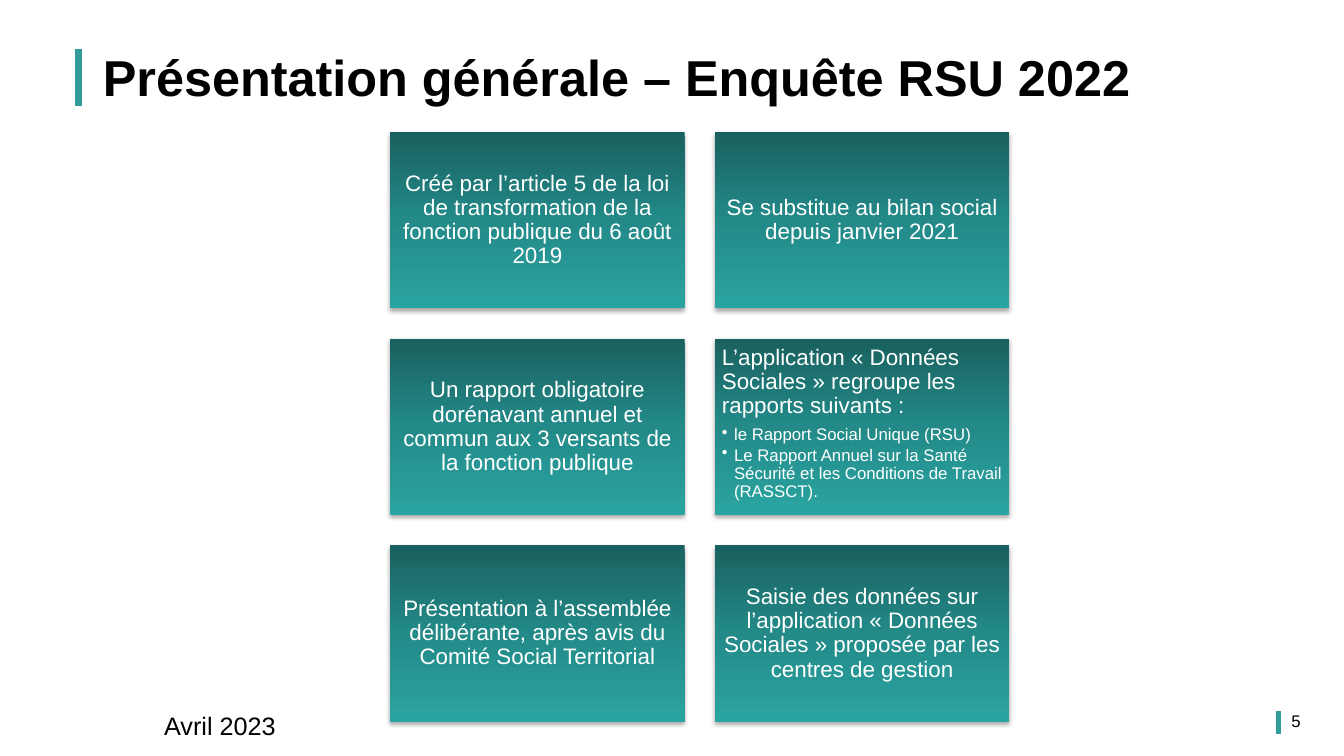
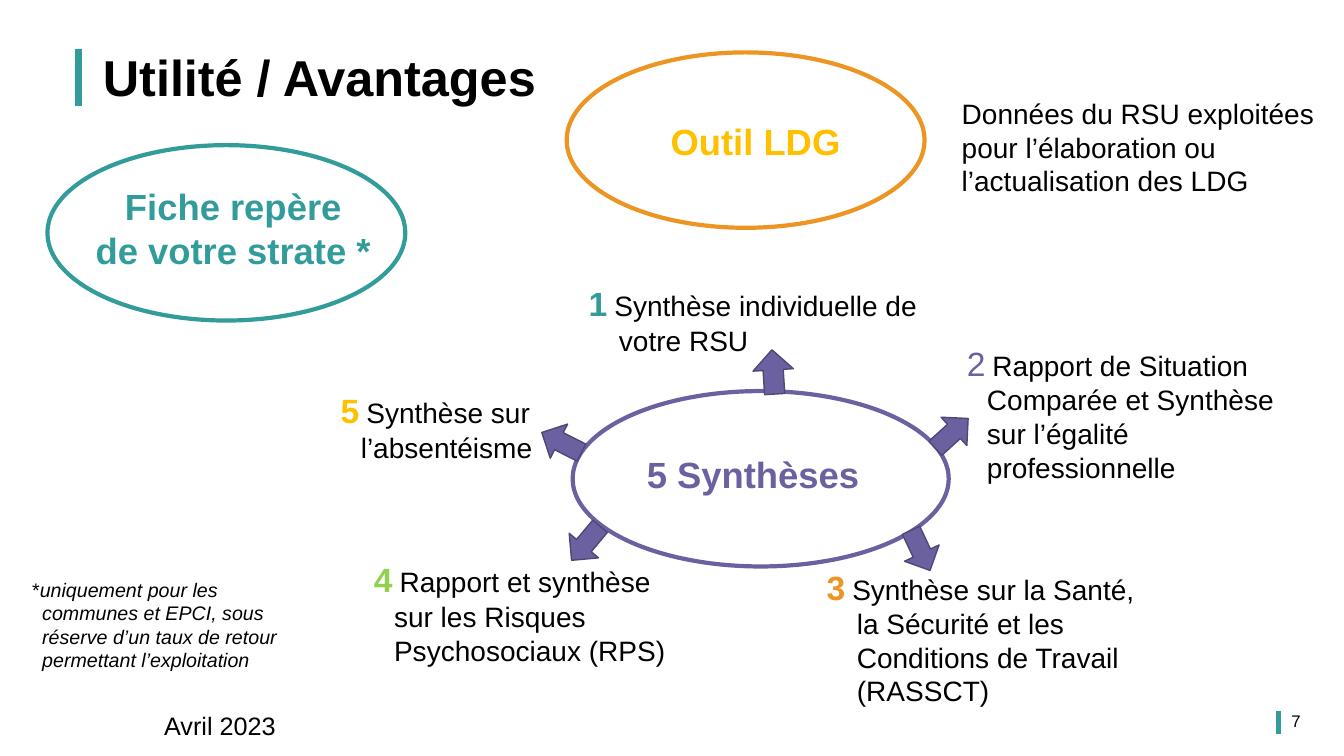
from copy import deepcopy

from lxml import etree
from pptx import Presentation
from pptx.dml.color import RGBColor
from pptx.enum.shapes import MSO_SHAPE as SHAPE
from pptx.enum.text import MSO_ANCHOR as ANCHOR, PP_ALIGN as ALIGN
from pptx.oxml.ns import qn
from pptx.util import Inches, Pt

# Shared style
FONT = "Arial"
COLORS = {
    "teal": "329C9A", "orange": "EC9522", "yellow": "FFC000",
    "purple": "6B61A0", "purple_dark": "4F4876", "green": "92D050",
    "black": "000000", "white": "FFFFFF",
}
CARD_GRADIENT = [(0, "196160"), (0.5, "238A88"), (1, "2AA4A2")]
TITLE_BOX = (0.92, 0.07, 11.5, 1.45)
BANDS = [(0.74, 0.49, 0.07, 0.56), (12.66, 7.05, 0.05, 0.23)]
DATE, DATE_BOX = "Avril 2023", (1.53, 7, 8.86, 0.4)
NUMBER_BOX = (10, 6.95, 3, 0.4)

# Slide 1 content: (heading, bullets)
CARDS = [
    ("Créé par l’article 5 de la loi de transformation de la fonction publique du 6 août 2019", []),
    ("Se substitue au bilan social depuis janvier 2021", []),
    ("Un rapport obligatoire dorénavant annuel et commun aux 3 versants de la fonction publique", []),
    ("L’application « Données Sociales » regroupe les rapports suivants :", [
        "le Rapport Social Unique (RSU)",
        "Le Rapport Annuel sur la Santé Sécurité et les Conditions de Travail (RASSCT).",
    ]),
    ("Présentation à l’assemblée délibérante, après avis du Comité Social Territorial", []),
    ("Saisie des données sur l’application « Données Sociales » proposée par les centres de gestion", []),
]
CARD_LEFT, CARD_TOP, CARD_W, CARD_H = 3.87, 1.31, 2.92, 1.75
PITCH_X, PITCH_Y = 3.22, 2.05

# Slide 2 content
ELLIPSES = [  # box, line colour, label box, label colour, label lines
    ((5.62, 0.52, 3.55, 1.74), "orange", (5.93, 1.13, 3.13, 0.54), "yellow", ["Outil LDG"]),
    ((0.47, 1.44, 3.55, 1.74), "teal", (0.75, 1.78, 3.13, 1.41), "teal",
     ["Fiche repère", "de votre strate *"]),
    ((5.68, 3.88, 3.73, 1.74), "purple", (5.83, 4.44, 3.28, 0.98), "purple", ["5 Synthèses"]),
]
SYNTHESES = [  # box, number colour, bold number, indent, text
    ((5.74, 2.76, 3.62, 0.84), "teal", True, 0.3, "Synthèse individuelle de votre RSU"),
    ((9.49, 3.35, 3.31, 1.51), "purple", False, 0.2,
     "Rapport de Situation Comparée et Synthèse sur l’égalité professionnelle"),
    ((8.1, 5.57, 3.3, 1.51), "orange", True, 0.3,
     "Synthèse sur la Santé, la Sécurité et les Conditions de Travail (RASSCT)"),
    ((3.61, 5.5, 3.35, 1.18), "green", True, 0.2,
     "Rapport et synthèse sur les Risques Psychosociaux (RPS)"),
    ((3.28, 3.82, 3.18, 0.84), "yellow", True, 0.2, "Synthèse sur l’absentéisme"),
]
ARROWS = [  # left, top, height, rotation
    (7.45, 3.49, 0.4, 266.5), (5.35, 4.2, 0.38, 206.9), (5.59, 5.2, 0.38, 129.9),
    (8.91, 5.27, 0.38, 64.7), (9.22, 4.11, 0.38, 317.7),
]
ARROW_W = 0.44
NOTE_BOX = (0.22, 5.68, 2.88, 1.28)
NOTE = ("uniquement pour les communes et EPCI, sous réserve d’un taux de retour "
        "permettant l’exploitation")
LDG_BOX = (9.44, 0.91, 3.9, 1.11)
LDG_TEXT = "Données du RSU exploitées pour l’élaboration ou l’actualisation des LDG"


def rgb(name):
    return RGBColor.from_string(COLORS[name])


def inches(box):
    return [Inches(v) for v in box]


def add_run(p, text, size, color="black", **fmt):
    r = p.add_run()
    r.text = text
    r.font.color.rgb = rgb(color)
    for key, value in {"name": FONT, "size": Pt(size), **fmt}.items():
        setattr(r.font, key, value)


def hang(p, indent):
    pPr = p._p.get_or_add_pPr()
    pPr.set("marL", str(Inches(indent)))
    pPr.set("indent", str(-Inches(indent)))
    return pPr


def add_paragraph(tf, first, align=ALIGN.LEFT):
    p = tf.paragraphs[0] if first else tf.add_paragraph()
    p.alignment = align
    return p


def add_text(s, box, lines, align=ALIGN.LEFT, anchor=ANCHOR.TOP, indent=0):
    """Each line is a list of (text, size, colour, format) runs."""
    tf = s.shapes.add_textbox(*inches(box)).text_frame
    tf.word_wrap, tf.vertical_anchor = True, anchor
    for i, runs in enumerate(lines):
        p = add_paragraph(tf, i == 0, align)
        if indent:
            hang(p, indent)
        for text, size, color, fmt in runs:
            add_run(p, text, size, color, **fmt)


def add_shape(s, kind, box, fill=None, line=None, width=1):
    sp = s.shapes.add_shape(kind, *inches(box))
    sp.shadow.inherit = False
    if fill:
        sp.fill.solid()
        sp.fill.fore_color.rgb = rgb(fill)
    else:
        sp.fill.background()
    if line:
        sp.line.color.rgb, sp.line.width = rgb(line), Pt(width)
    else:
        sp.line.fill.background()
    return sp


def add_slide(prs, title, number):
    s = prs.slides.add_slide(prs.slide_layouts[5])
    for band in BANDS:
        add_shape(s, SHAPE.FLOWCHART_PROCESS, band, "teal")
    add_text(s, DATE_BOX, [[(DATE, 18, "black", {})]])
    add_text(s, NUMBER_BOX, [[(number, 12, "black", {})]], ALIGN.RIGHT, ANCHOR.MIDDLE)
    sp = s.shapes.title
    sp.left, sp.top, sp.width, sp.height = inches(TITLE_BOX)
    tf = sp.text_frame
    tf.vertical_anchor = ANCHOR.MIDDLE
    p = add_paragraph(tf, True)
    p.line_spacing = 0.9
    add_run(p, title, 36, bold=True)
    return s


def style_card(sp):
    """Vertical gradient and a soft shadow below."""
    sp.fill.gradient()
    sp.fill.gradient_angle = 270
    spPr = sp._element.spPr
    stops = spPr.find(qn("a:gradFill")).find(qn("a:gsLst"))
    stops.insert(1, deepcopy(stops[0]))
    for stop, (position, color) in zip(sp.fill.gradient_stops, CARD_GRADIENT):
        stop.position = position
        stop.color.rgb = RGBColor.from_string(color)
    shadow = etree.SubElement(
        spPr.find(qn("a:effectLst")), qn("a:outerShdw"),
        blurRad=str(Pt(3.1)), dist=str(Pt(1.8)), dir="5400000", rotWithShape="0")
    color = etree.SubElement(shadow, qn("a:srgbClr"), val=COLORS["black"])
    etree.SubElement(color, qn("a:alpha"), val="35000")


def add_card(s, box, heading, bullets):
    sp = add_shape(s, SHAPE.RECTANGLE, box)
    style_card(sp)
    tf = sp.text_frame
    tf.word_wrap = True
    tf.vertical_anchor = ANCHOR.TOP if bullets else ANCHOR.MIDDLE
    for side in ("left", "top", "right", "bottom"):
        setattr(tf, f"margin_{side}", Inches(0.07))
    p = add_paragraph(tf, True, ALIGN.LEFT if bullets else ALIGN.CENTER)
    p.line_spacing = 0.9
    if bullets:
        p.space_after = Pt(5.6)
    add_run(p, heading, 16, "white")
    for text in bullets:
        p = add_paragraph(tf, False)
        etree.SubElement(hang(p, 0.12), qn("a:buChar"), char="•")
        p.line_spacing, p.space_after = 0.9, Pt(1.8)
        add_run(p, text, 12, "white")


def build_overview(prs):
    s = add_slide(prs, "Présentation générale – Enquête RSU 2022", "5")
    for i, (heading, bullets) in enumerate(CARDS):
        row, col = divmod(i, 2)
        box = (CARD_LEFT + col * PITCH_X, CARD_TOP + row * PITCH_Y, CARD_W, CARD_H)
        add_card(s, box, heading, bullets)


def build_benefits(prs):
    s = add_slide(prs, "Utilité / Avantages", "7")
    # Ellipses and their labels
    for box, line, label_box, color, lines in ELLIPSES:
        add_shape(s, SHAPE.OVAL, box, line=line, width=3)
        add_text(s, label_box, [[(text, 26, color, {"bold": True})] for text in lines],
                 ALIGN.CENTER)
    # Numbered reports around the third ellipse
    for number, (box, color, bold, indent, text) in enumerate(SYNTHESES, 1):
        runs = [(str(number), 24, color, {"bold": bold}),
                (" ", 18, "black", {}), (text, 20, "black", {})]
        add_text(s, box, [runs], indent=indent)
    for left, top, height, rotation in ARROWS:
        sp = add_shape(s, SHAPE.RIGHT_ARROW, (left, top, ARROW_W, height),
                       "purple", "purple_dark")
        sp.rotation = rotation
    # Side notes
    add_text(s, NOTE_BOX, [[("*", 14, "black", {}), (NOTE, 14, "black", {"italic": True})]],
             indent=0.1)
    add_text(s, LDG_BOX, [[(LDG_TEXT, 20, "black", {})]])


def main():
    prs = Presentation()
    prs.slide_width, prs.slide_height = Inches(13.33), Inches(7.5)
    build_overview(prs)
    build_benefits(prs)
    prs.save("out.pptx")


if __name__ == "__main__":
    main()
